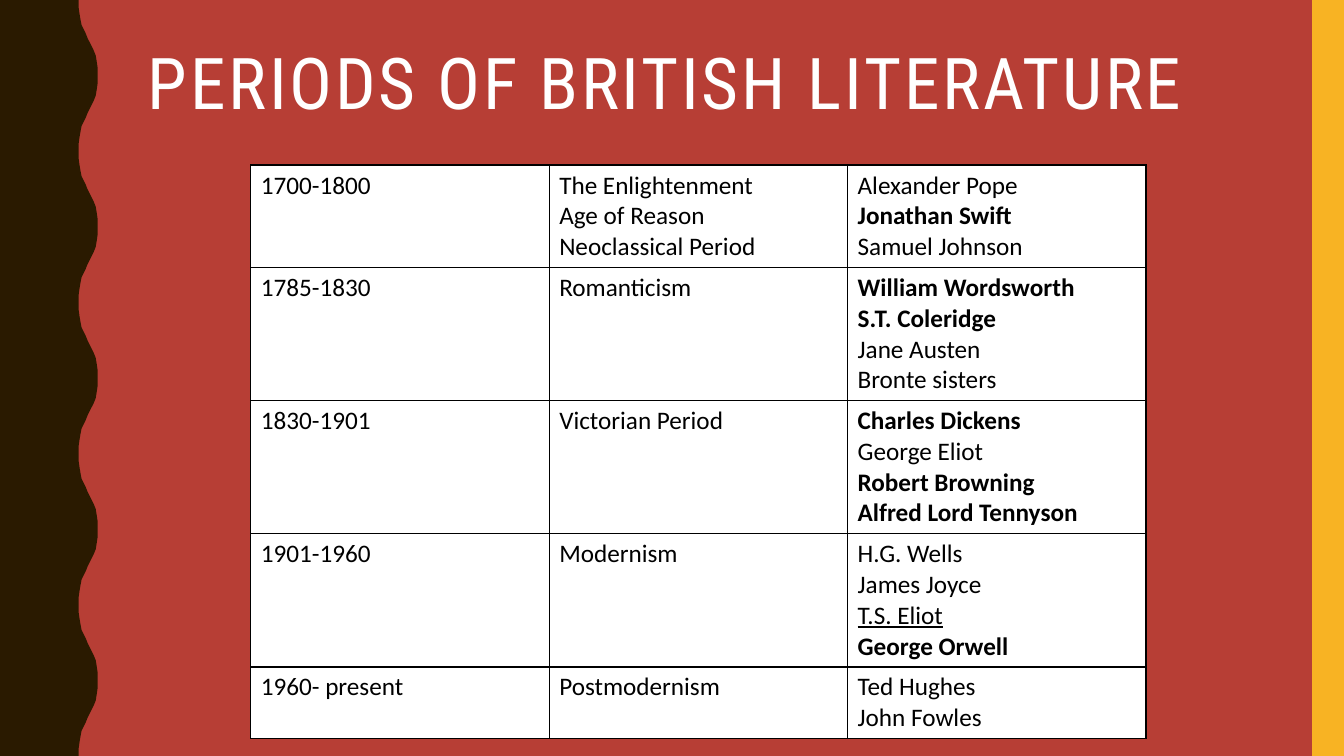
import dataclasses

import pptx
import pptx.dml.color
import pptx.enum.shapes
import pptx.enum.text
import pptx.oxml
import pptx.oxml.ns
import pptx.util

Cm = pptx.util.Cm


@dataclasses.dataclass(frozen=True)
class Theme:
    background: str = "B73E35"
    wave: str = "2A1A00"
    stripe: str = "F8B323"
    paper: str = "FFFFFF"
    ink: str = "000000"
    title_color: str = "FFFFFF"
    title_font: str = "Roboto Condensed"
    body_font: str = "Calibri"
    title_size: int = 51
    body_size: int = 18
    border_width: int = 1


SLIDE_WIDTH, SLIDE_HEIGHT = 33.87, 19.05

# Half a wave from trough to crest, as (x, y) in hundredths of an inch
HALF_WAVE = [(78, 0), (78, 7), (79, 14), (80, 20), (81, 25), (83, 29), (85, 33), (87, 38),
             (89, 42), (91, 46), (93, 50), (95, 55), (96, 61), (97, 68), (97, 75)]
WAVE_LENGTH = 150
WAVE_COUNT = 5

# Dates, names of the period, authors; * marks bold and _ marks underlined
PERIODS = [
    ("1700-1800", ["The Enlightenment", "Age of Reason", "Neoclassical Period"],
     ["Alexander Pope", "*Jonathan Swift", "Samuel Johnson"]),
    ("1785-1830", ["Romanticism"],
     ["*William Wordsworth", "*S.T. Coleridge", "Jane Austen", "Bronte sisters"]),
    ("1830-1901", ["Victorian Period"],
     ["*Charles Dickens", "George Eliot", "*Robert Browning", "*Alfred Lord Tennyson"]),
    ("1901-1960", ["Modernism"],
     ["H.G. Wells", "James Joyce", "_T.S. Eliot", "*George Orwell"]),
    ("1960- present", ["Postmodernism"], ["Ted Hughes", "John Fowles"]),
]


def rgb(color):
    return pptx.dml.color.RGBColor.from_string(color)


def add_text(paragraph, text, *, font, size, color, bold=False, underline=False, tracking=0):
    """Add one formatted run; tracking is letter spacing in points."""
    run = paragraph.add_run()
    run.text = text
    run.font.name = font
    run.font.size = pptx.util.Pt(size)
    run.font.color.rgb = rgb(color)
    run.font.bold = bold
    run.font.underline = underline
    if tracking:
        run.font._element.set("spc", str(tracking * 100))


class SlideBuilder:
    def __init__(self, slide, theme):
        self.slide = slide
        self.theme = theme
        slide.background.fill.solid()
        slide.background.fill.fore_color.rgb = rgb(theme.background)

    def paint(self, shape, color):
        shape.shadow.inherit = False
        shape.fill.solid()
        shape.fill.fore_color.rgb = rgb(color)
        shape.line.fill.background()

    def wavy_edge(self):
        falling = [(x, WAVE_LENGTH - y) for x, y in reversed(HALF_WAVE[:-1])]
        edge = [(x, y + wave * WAVE_LENGTH)
                for wave in range(WAVE_COUNT) for x, y in HALF_WAVE + falling]
        outline = self.slide.shapes.build_freeform(0, 0, scale=Cm(2.54) / 100)
        outline.add_line_segments(edge + [(0, WAVE_COUNT * WAVE_LENGTH)], close=True)
        self.paint(outline.convert_to_shape(), self.theme.wave)

    def stripe(self, left, width):
        bar = self.slide.shapes.add_shape(
            pptx.enum.shapes.MSO_SHAPE.RECTANGLE, Cm(left), 0, Cm(width), Cm(SLIDE_HEIGHT))
        self.paint(bar, self.theme.stripe)

    def title(self, text, left, top, width, height):
        frame = self.slide.shapes.add_textbox(
            Cm(left), Cm(top), Cm(width), Cm(height)).text_frame
        frame.word_wrap = True
        frame.vertical_anchor = pptx.enum.text.MSO_ANCHOR.TOP
        heading = frame.paragraphs[0]
        heading.line_spacing = 0.9
        add_text(heading, text, font=self.theme.title_font, size=self.theme.title_size,
                 color=self.theme.title_color, tracking=2)

    def border(self, cell):
        properties = cell._tc.get_or_add_tcPr()
        width = pptx.util.Pt(self.theme.border_width)
        for position, side in enumerate(("lnL", "lnR", "lnT", "lnB")):
            properties.insert(position, pptx.oxml.parse_xml(
                f'<a:{side} {pptx.oxml.ns.nsdecls("a")} w="{width}"><a:solidFill>'
                f'<a:srgbClr val="{self.theme.ink}"/></a:solidFill></a:{side}>'))

    def fill_cell(self, cell, entries):
        cell.fill.solid()
        cell.fill.fore_color.rgb = rgb(self.theme.paper)
        self.border(cell)
        frame = cell.text_frame
        for index, entry in enumerate(entries):
            paragraph = frame.add_paragraph() if index else frame.paragraphs[0]
            add_text(paragraph, entry.lstrip("*_"), font=self.theme.body_font,
                     size=self.theme.body_size, color=self.theme.ink,
                     bold=entry.startswith("*"), underline=entry.startswith("_"))

    def period_table(self, periods, left, top, column_width):
        heights = [0.27 + 0.77 * max(len(names), len(authors)) for _, names, authors in periods]
        table = self.slide.shapes.add_table(
            len(periods), 3, Cm(left), Cm(top), Cm(3 * column_width), Cm(sum(heights))).table
        for column in table.columns:
            column.width = Cm(column_width)
        for row, height, (dates, names, authors) in zip(table.rows, heights, periods):
            row.height = Cm(height)
            for cell, entries in zip(row.cells, ([dates], names, authors)):
                self.fill_cell(cell, entries)


def main():
    deck = pptx.Presentation()
    deck.slide_width, deck.slide_height = Cm(SLIDE_WIDTH), Cm(SLIDE_HEIGHT)
    builder = SlideBuilder(deck.slides.add_slide(deck.slide_layouts[6]), Theme())
    builder.wavy_edge()
    builder.stripe(left=33.07, width=0.8)
    builder.period_table(PERIODS, left=6.32, top=4.16, column_width=7.52)
    builder.title("PERIODS OF BRITISH LITERATURE", left=3.48, top=1.07, width=28.27, height=4.14)
    deck.save("out.pptx")


if __name__ == "__main__":
    main()
